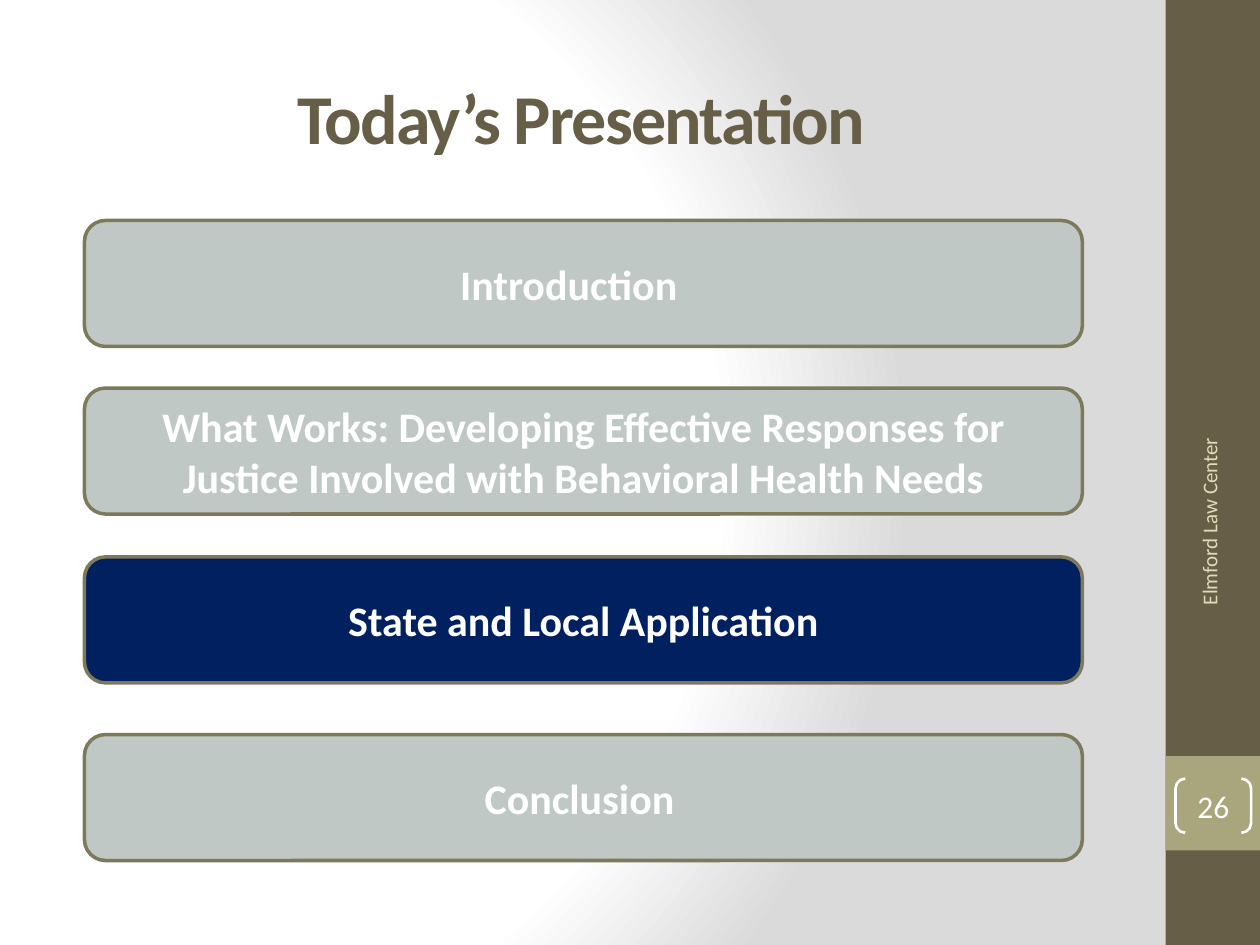
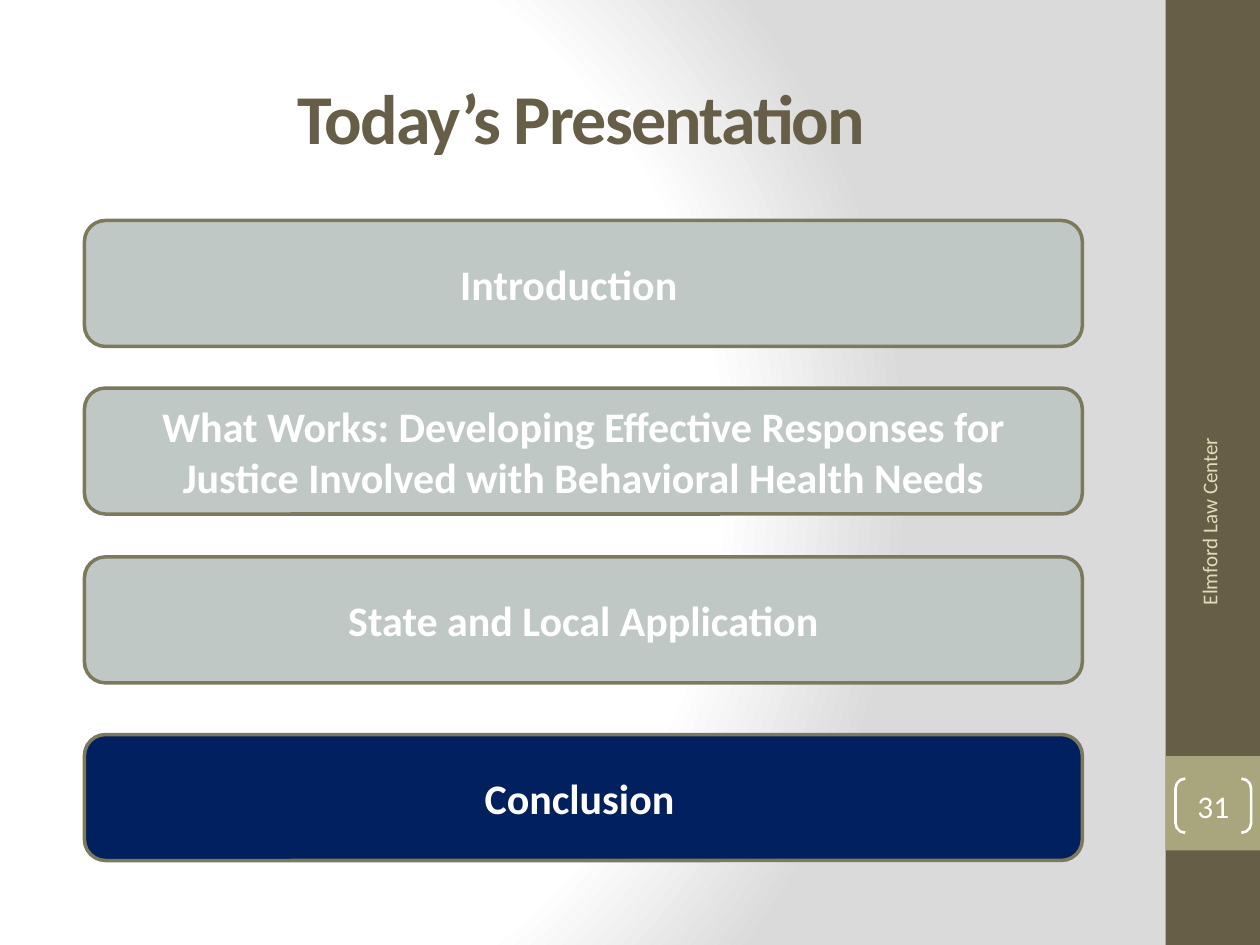
"""Build two agenda slides that highlight the current section of the presentation."""
from pptx import Presentation
from pptx import util as u
from pptx import oxml
from pptx.dml.color import RGBColor
from pptx.enum import shapes, text
from pptx.oxml.ns import nsdecls

HEADING = "Today’s Presentation"
ORGANISATION = "Elmford Law Center"
AGENDA = [
    dict(topic="Introduction", top=1.75, right_inset=0.33),
    dict(topic="What Works: Developing Effective Responses for "
               "Justice Involved with Behavioral Health Needs", top=3.08),
    dict(topic="State and Local Application", top=4.42),
    dict(topic="Conclusion", top=5.83, right_inset=0.16),
]
SLIDES = [
    dict(number=26, current="State and Local Application"),
    dict(number=31, current="Conclusion"),
]

WIDTH, HEIGHT = 10, 7.5
BAND = 0.75
BAND_LEFT = WIDTH - BAND
TOPIC_LEFT, TOPIC_WIDTH, TOPIC_HEIGHT = 0.67, 7.92, 1

BROWN = RGBColor(0x67, 0x5E, 0x47)
OLIVE = RGBColor(0xA9, 0xA5, 0x7C)
OUTLINE = RGBColor(0x7D, 0x7A, 0x5C)
CREAM = RGBColor(0xDF, 0xDC, 0xB7)
MUTED = RGBColor(0xBF, 0xC8, 0xC4)
NAVY = RGBColor(0x00, 0x20, 0x60)
WHITE = RGBColor(0xFF, 0xFF, 0xFF)
SILVER = RGBColor(0xDA, 0xDA, 0xDA)
BACKGROUND_STOPS = [(0, WHITE), (75, WHITE), (100, SILVER)]


def write(shape, words, size, color, bold=False, align=text.PP_ALIGN.CENTER,
          insets=(0.1, 0.05, 0.1, 0.05), spacing=0):
    frame = shape.text_frame
    frame.word_wrap = True
    frame.auto_size = text.MSO_AUTO_SIZE.NONE
    frame.vertical_anchor = text.MSO_ANCHOR.MIDDLE
    (frame.margin_left, frame.margin_top,
     frame.margin_right, frame.margin_bottom) = map(u.Inches, insets)
    paragraph = frame.paragraphs[0]
    paragraph.alignment = align
    run = paragraph.add_run()
    run.text = words
    font = run.font
    font.name, font.size, font.bold = "Calibri", u.Pt(size), bold
    font.color.rgb = color
    if spacing:
        run._r.get_or_add_rPr().set("spc", str(spacing * 100))


def add_block(slide, kind, box, fill=None, line=None, line_width=1):
    block = slide.shapes.add_shape(kind, *map(u.Inches, box))
    block.shadow.inherit = False
    if fill is None:
        block.fill.background()
    else:
        block.fill.solid()
        block.fill.fore_color.rgb = fill
    if line is None:
        block.line.fill.background()
    else:
        block.line.color.rgb = line
        block.line.width = u.Pt(line_width)
    return block


def paint_background(master):
    master.background.fill.gradient()
    gradient = master.element.xpath(".//p:bgPr/a:gradFill")[0]
    stops = "".join(f'<a:gs pos="{share * 1000}"><a:srgbClr val="{color}"/></a:gs>'
                    for share, color in BACKGROUND_STOPS)
    gradient.getparent().replace(gradient, oxml.parse_xml(
        f'<a:gradFill {nsdecls("a")} rotWithShape="1"><a:gsLst>{stops}</a:gsLst>'
        '<a:path path="circle"><a:fillToRect l="20000" t="50000" r="100000" b="50000"/>'
        '</a:path></a:gradFill>'))


def add_frame(slide, number):
    rectangle = shapes.MSO_SHAPE.RECTANGLE
    add_block(slide, rectangle, (BAND_LEFT, 0, BAND, HEIGHT), BROWN)
    add_block(slide, rectangle, (BAND_LEFT, 6, BAND, BAND), OLIVE)

    heading = slide.shapes.title
    heading.left, heading.top, heading.width, heading.height = map(
        u.Inches, (0.5, 0.3, 8.33, 1.25))
    write(heading, HEADING, 40, BROWN, bold=True, spacing=-1,
          insets=(0.1, 0.05, 0.2, 0.05))

    organisation = slide.shapes.add_textbox(*map(u.Inches, (8.3, 4.43, 2.59, 0.4)))
    organisation.rotation = 270
    write(organisation, ORGANISATION, 12, CREAM, align=text.PP_ALIGN.RIGHT,
          insets=(0.1, 0.05, 0.14, 0.05))

    page = add_block(slide, shapes.MSO_SHAPE.DOUBLE_BRACKET,
                     (9.33, 6.18, 0.6, 0.43), line=WHITE, line_width=1.5)
    page.adjustments[0] = 0.18
    write(page, str(number), 18, WHITE, insets=(0, 0, 0, 0))


def add_agenda(slide, current):
    for entry in reversed(AGENDA):
        topic = entry["topic"]
        panel = add_block(slide, shapes.MSO_SHAPE.ROUNDED_RECTANGLE,
                          (TOPIC_LEFT, entry["top"], TOPIC_WIDTH, TOPIC_HEIGHT),
                          NAVY if topic == current else MUTED, OUTLINE, 2)
        write(panel, topic, 24, WHITE, bold=True,
              insets=(0.1, 0.05, entry.get("right_inset", 0.1), 0.05))


def main():
    deck = Presentation()
    deck.slide_width, deck.slide_height = u.Inches(WIDTH), u.Inches(HEIGHT)
    paint_background(deck.slide_master)
    title_only = deck.slide_layouts.get_by_name("Title Only")
    for content in SLIDES:
        slide = deck.slides.add_slide(title_only)
        add_frame(slide, content["number"])
        add_agenda(slide, content["current"])
    deck.save("out.pptx")


if __name__ == "__main__":
    main()
